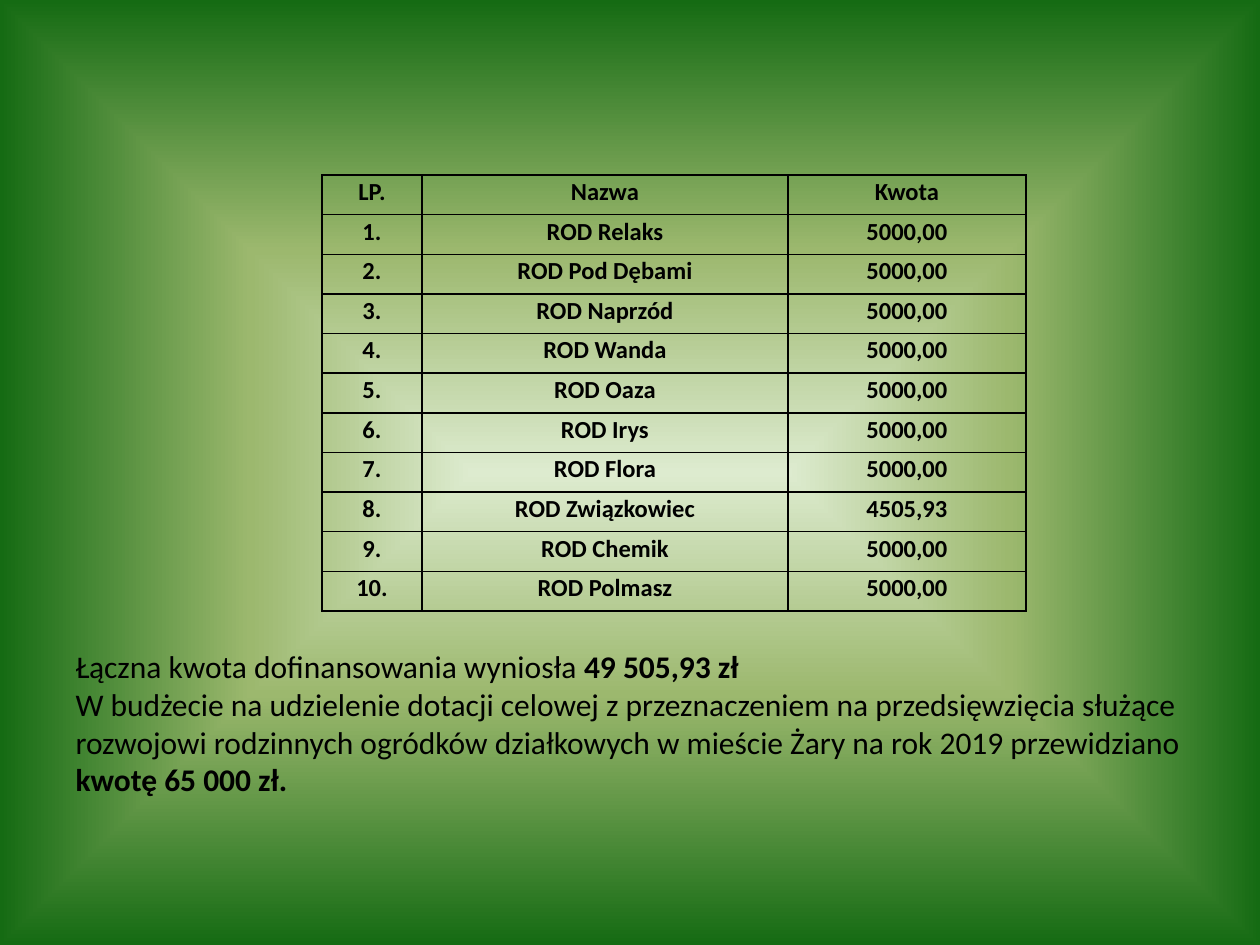
from pptx import Presentation
from pptx.dml.color import RGBColor
from pptx.enum.text import MSO_ANCHOR, MSO_AUTO_SIZE, PP_ALIGN
from pptx.oxml import parse_xml
from pptx.oxml.ns import nsdecls
from pptx.util import Pt

EMU_PER_PX = 914400 / 126
COLORS = {"text": "000000", "border": "000000",
          "center": "DDEBCF", "middle": "9CB86E", "edge": "156B13"}


def px(length):
    return round(length * EMU_PER_PX)


def add_span(para, text, size, bold):
    span = para.add_run()
    span.text = text
    span.font.name = "Calibri"
    span.font.size = Pt(size)
    span.font.bold = bold
    span.font.color.rgb = RGBColor.from_string(COLORS["text"])


deck = Presentation()
deck.slide_width, deck.slide_height = px(1260), px(945)
page = deck.slides.add_slide(deck.slide_layouts[1])
title = page.shapes.title.element
title.getparent().remove(title)

# Background: gradient from the centre to the edges
page.background.fill.solid()
background = page.element.xpath(".//p:bgPr")[0]
stops = "".join(
    f'<a:gs pos="{position * 1000}"><a:srgbClr val="{COLORS[name]}"/></a:gs>'
    for position, name in [(0, "center"), (47, "middle"), (100, "edge")])
background.replace(background[0], parse_xml(
    f'<a:gradFill {nsdecls("a")} rotWithShape="1"><a:gsLst>{stops}</a:gsLst>'
    '<a:path path="shape"><a:fillToRect l="50000" t="50000" r="50000" b="50000"/>'
    '</a:path></a:gradFill>'))

# Summary below the table
body = page.placeholders[1]
body.left, body.top, body.width, body.height = px(63), px(221), px(1134), px(624)
frame = body.text_frame
frame.word_wrap = True
frame.auto_size = MSO_AUTO_SIZE.NONE
frame.vertical_anchor = MSO_ANCHOR.TOP
frame.margin_top = px(426)
summary = [
    [("Łączna kwota dofinansowania wyniosła ", False), ("49 505,93 zł", True)],
    [("W budżecie na udzielenie dotacji celowej z przeznaczeniem na przedsięwzięcia "
      "służące rozwojowi rodzinnych ogródków działkowych w mieście Żary na rok 2019 "
      "przewidziano", False), (" kwotę 65 000 zł.", True)],
]
for index, spans in enumerate(summary):
    para = frame.add_paragraph() if index else frame.paragraphs[0]
    para.space_before = Pt(0)
    properties = para._p.get_or_add_pPr()
    properties.set("marL", "0")
    properties.set("indent", "0")
    properties.append(parse_xml(f'<a:buNone {nsdecls("a")}/>'))
    for text, bold in spans:
        add_span(para, text, 18, bold)

# Grants table
gardens = ["Relaks", "Pod Dębami", "Naprzód", "Wanda", "Oaza", "Irys", "Flora",
           "Związkowiec", "Chemik", "Polmasz"]
amounts = {"Związkowiec": "4505,93"}
rows = [("LP.", "Nazwa", "Kwota")]
for number, garden in enumerate(gardens, 1):
    rows.append((f"{number}.", f"ROD {garden}", amounts.get(garden, "5000,00")))

table = page.shapes.add_table(len(rows), 3, px(322), px(175), px(704), px(436)).table
table.first_row = False
table.horz_banding = False
for column, width in zip(table.columns, (100, 366, 238)):
    column.width = px(width)
for row, texts in zip(table.rows, rows):
    for cell, text in zip(row.cells, texts):
        cell.margin_left = cell.margin_right = px(9)
        cell.margin_top = cell.margin_bottom = 0
        cell.vertical_anchor = MSO_ANCHOR.TOP
        for side in "LRTB":
            cell._tc.get_or_add_tcPr().append(parse_xml(
                f'<a:ln{side} {nsdecls("a")} w="{Pt(1)}"><a:solidFill>'
                f'<a:srgbClr val="{COLORS["border"]}"/></a:solidFill></a:ln{side}>'))
        cell.fill.background()
        para = cell.text_frame.paragraphs[0]
        para.alignment = PP_ALIGN.CENTER
        para.line_spacing = 1.07
        add_span(para, text, 14, True)

deck.save("out.pptx")
